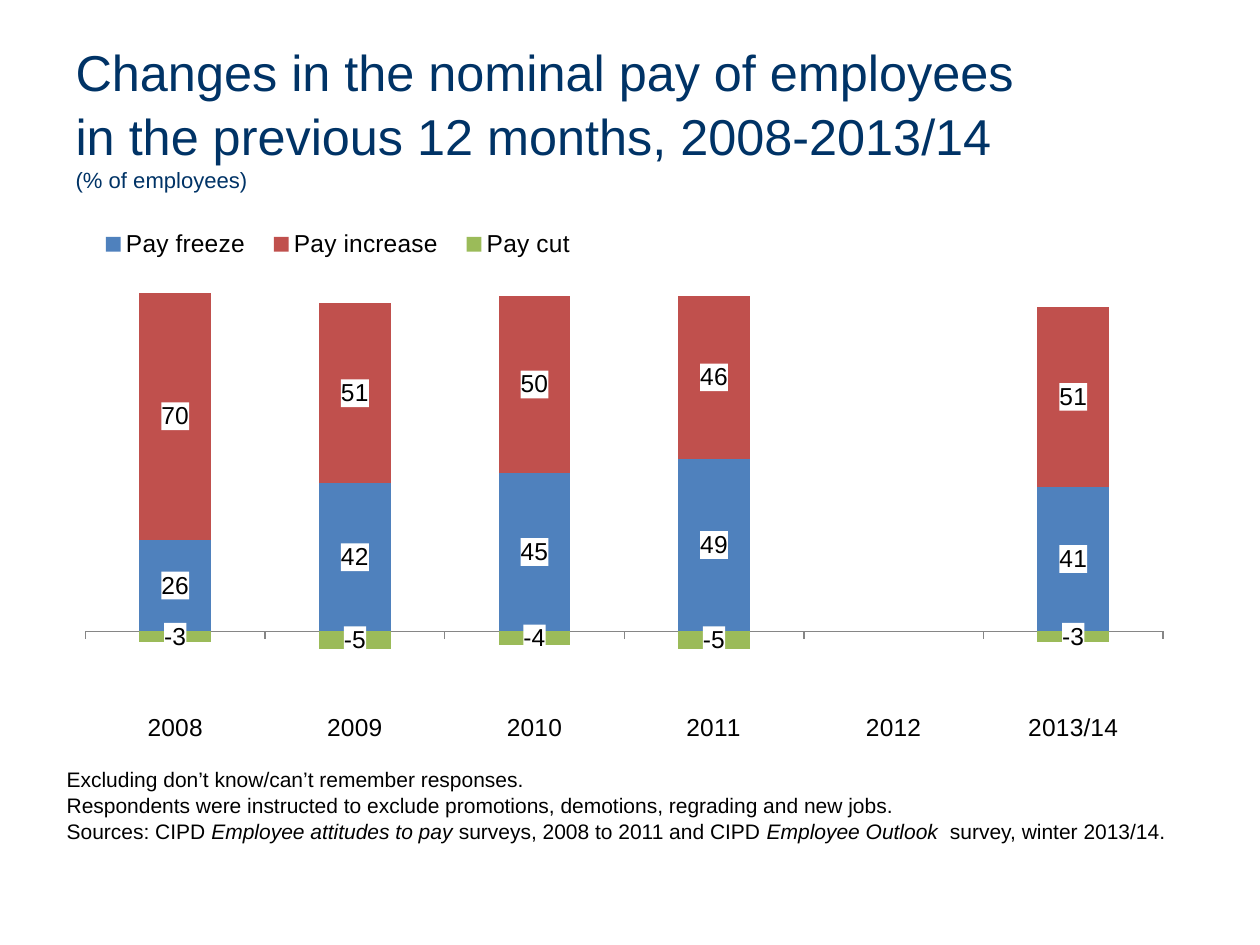
from pptx import Presentation
from pptx.chart.data import CategoryChartData
from pptx.dml.color import RGBColor
from pptx.enum.chart import XL_CHART_TYPE, XL_LABEL_POSITION, XL_LEGEND_POSITION
from pptx.enum.chart import XL_TICK_LABEL_POSITION, XL_TICK_MARK
from pptx.enum.text import MSO_ANCHOR, PP_ALIGN
from pptx.oxml import parse_xml
from pptx.oxml.ns import nsdecls, qn
from pptx.util import Pt

YEARS = ["2008", "2009", "2010", "2011", "2012", "2013/14"]
SERIES = [
    ("Pay freeze", [26, 42, 45, 49, None, 41], "4F81BD"),
    ("Pay increase", [70, 51, 50, 46, None, 51], "C0504D"),
    ("Pay cut", [-3, -5, -4, -5, None, -3], "9BBB59"),
]
NOTES = [
    [("Excluding don’t know/can’t remember responses.", False)],
    [("Respondents were instructed to exclude promotions, demotions, regrading and new jobs.", False)],
    [
        ("Sources: CIPD ", False),
        ("Employee attitudes to pay ", True),
        ("surveys, 2008 to 2011 and CIPD ", False),
        ("Employee Outlook ", True),
        (" survey, winter 2013/14.", False),
    ],
]


def color(value):
    return RGBColor.from_string(value)


def set_font(font, size, value):
    font.name = "Arial"
    font.size = Pt(size)
    font.color.rgb = color(value)


def manual_layout(x, y, width, height, inner=False):
    target = '<c:layoutTarget val="inner"/>' if inner else ""
    return parse_xml(
        f'<c:layout {nsdecls("c")}><c:manualLayout>{target}'
        '<c:xMode val="edge"/><c:yMode val="edge"/>'
        f'<c:x val="{x}"/><c:y val="{y}"/><c:w val="{width}"/><c:h val="{height}"/>'
        "</c:manualLayout></c:layout>"
    )


def remove_layout(element):
    for layout in element.findall(qn("c:layout")):
        element.remove(layout)


def add_title(page, left, top, width, height):
    title = page.shapes.title
    title.left, title.top, title.width, title.height = Pt(left), Pt(top), Pt(width), Pt(height)
    frame = title.text_frame
    frame.word_wrap = True
    frame.vertical_anchor = MSO_ANCHOR.MIDDLE
    para = frame.paragraphs[0]
    para.alignment = PP_ALIGN.LEFT
    para.line_spacing = 1.05
    heading = para.add_run()
    heading.text = "Changes in the nominal pay of employees in the previous 12 months, 2008-2013/14"
    para.add_line_break()
    unit = para.add_run()
    unit.text = "(% of employees)"
    for span, size in ((heading, 28.8), (unit, 12.6)):
        set_font(span.font, size, "003366")


def style_series(series, fill):
    series.format.fill.solid()
    series.format.fill.fore_color.rgb = color(fill)
    series.invert_if_negative = False
    labels = series.data_labels
    labels.show_value = True
    labels.position = XL_LABEL_POSITION.CENTER
    set_font(labels.font, 14, "000000")
    background = parse_xml(
        f'<c:spPr {nsdecls("c", "a")}><a:solidFill><a:srgbClr val="FFFFFF"/></a:solidFill></c:spPr>'
    )
    labels._element.find(qn("c:txPr")).addprevious(background)


def add_pay_chart(page, left, top, width, height):
    data = CategoryChartData()
    data.categories = YEARS
    for name, values, _ in SERIES:
        data.add_series(name, values)
    chart = page.shapes.add_chart(
        XL_CHART_TYPE.COLUMN_STACKED, Pt(left), Pt(top), Pt(width), Pt(height), data
    ).chart
    set_font(chart.font, 14, "000000")
    chart.has_title = False

    plot = chart.plots[0]
    plot.vary_by_categories = False
    plot.gap_width = 150
    plot.overlap = 100
    for series, (_, _, fill) in zip(plot.series, SERIES):
        style_series(series, fill)

    years = chart.category_axis
    years.tick_label_position = XL_TICK_LABEL_POSITION.LOW
    years.major_tick_mark = XL_TICK_MARK.OUTSIDE
    years.format.line.color.rgb = color("868686")
    years.format.line.width = Pt(0.75)
    years.has_major_gridlines = False
    percent = chart.value_axis
    percent.minimum_scale = -20
    percent.maximum_scale = 100
    percent.has_major_gridlines = False
    percent.visible = False

    chart.has_legend = True
    legend = chart.legend
    legend.position = XL_LEGEND_POSITION.TOP
    legend.include_in_layout = False
    set_font(legend.font, 14, "000000")
    remove_layout(legend._element)
    legend._element.find(qn("c:legendPos")).addnext(manual_layout(0.02, 0.01, 0.45, 0.07))
    area = chart._chartSpace.chart.plotArea
    remove_layout(area)
    area.insert(0, manual_layout(0.02, 0.11, 0.96, 0.8, inner=True))


def add_notes_text(page, left, top, width, height):
    box = page.shapes.add_textbox(Pt(left), Pt(top), Pt(width), Pt(height))
    frame = box.text_frame
    frame.word_wrap = True
    for index, spans in enumerate(NOTES):
        para = frame.add_paragraph() if index else frame.paragraphs[0]
        para.line_spacing = 1.03
        set_font(para.font, 12, "000000")
        for text, italic in spans:
            span = para.add_run()
            span.text = text
            if italic:
                span.font.italic = True


def main():
    deck = Presentation()
    deck.slide_width, deck.slide_height = Pt(720), Pt(540)
    page = deck.slides.add_slide(deck.slide_layouts[5])
    add_title(page, 36, 21.6, 556.6, 89.3)
    add_pay_chart(page, 36, 126, 641.5, 302.4)
    add_notes_text(page, 31, 434.2, 646.6, 51.1)
    deck.save("out.pptx")


if __name__ == "__main__":
    main()
